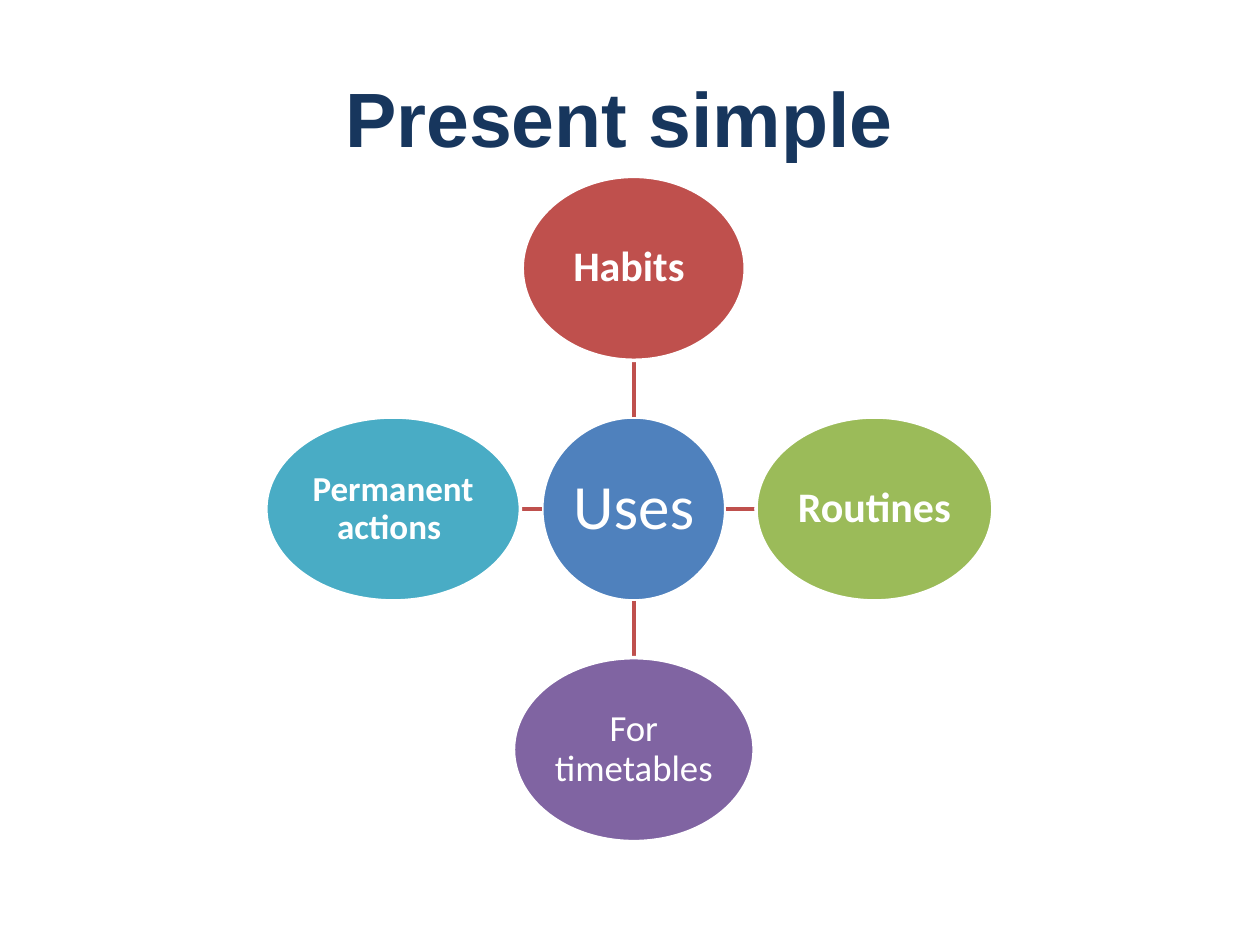
"""Build a slide with the uses of the present simple around a hub."""
from lxml import etree
from pptx import Presentation
from pptx.dml.color import RGBColor
from pptx.enum.shapes import MSO_CONNECTOR, MSO_SHAPE
from pptx.enum.text import MSO_ANCHOR, PP_ALIGN
from pptx.oxml.ns import qn
from pptx.util import Inches, Pt

OVAL = MSO_SHAPE.OVAL
LINE = MSO_CONNECTOR.STRAIGHT
MIDDLE = MSO_ANCHOR.MIDDLE
CENTER = PP_ALIGN.CENTER

COLORS = {
    "navy": "17365D", "white": "FFFFFF", "blue": "4F81BD", "red": "BF504D",
    "green": "9BBB59", "purple": "8064A2", "teal": "49ACC5",
}


def rgb(name):
    return RGBColor.from_string(COLORS[name])


def write(shape, text, inset, space, font):
    frame = shape.text_frame
    frame.word_wrap = True
    frame.vertical_anchor = MIDDLE
    for side, gap in inset.items():
        setattr(frame, "margin_" + side, Inches(gap))
    para = frame.paragraphs[0]
    para.alignment = CENTER
    para.line_spacing = space
    run = para.add_run()
    run.text = text
    for key, value in font.items():
        if key == "color":
            run.font.color.rgb = rgb(value)
        else:
            setattr(run.font, key, value)


prs = Presentation()
prs.slide_width = Inches(10)
prs.slide_height = Inches(7.5)
slide = prs.slides.add_slide(prs.slide_layouts[6])
shapes = slide.shapes

title = shapes.add_textbox(Inches(0.5), Inches(0.3), Inches(9), Inches(1.25))
write(title, "Present simple ",
      {"left": 0.1, "right": 0.1, "top": 0.05, "bottom": 0.05}, 1.0,
      {"name": "Arial", "size": Pt(44), "bold": True, "color": "navy"})

HUB_X, HUB_Y = 5.03, 4.04
REACH = 1.91
SIZE = 1.46

ovals = [
    ("Uses ", 0, 0, SIZE, "blue", 36, False),
    ("Habits ", 0, -1, 1.77, "red", 24, True),
    ("Routines ", 1, 0, 1.88, "green", 24, True),
    ("For timetables", 0, 1, 1.91, "purple", 21, False),
    ("Permanent actions ", -1, 0, 2.02, "teal", 20, True),
]

for text, dx, dy, width, color, size, bold in ovals:
    x = HUB_X + dx * REACH
    y = HUB_Y + dy * REACH
    if dx or dy:
        link = shapes.add_connector(
            LINE,
            Inches(HUB_X + dx * SIZE / 2), Inches(HUB_Y + dy * SIZE / 2),
            Inches(x - dx * width / 2), Inches(y - dy * SIZE / 2))
        link.line.color.rgb = rgb("red")
        link.line.width = Pt(2)
        etree.SubElement(link._element.spPr, qn("a:effectLst"))
    oval = shapes.add_shape(
        OVAL, Inches(x - width / 2), Inches(y - SIZE / 2),
        Inches(width), Inches(SIZE))
    oval.shadow.inherit = False
    oval.fill.solid()
    oval.fill.fore_color.rgb = rgb(color)
    oval.line.color.rgb = rgb("white")
    oval.line.width = Pt(2)
    write(oval, text, dict.fromkeys(("left", "right", "top", "bottom"), 0.02),
          0.9, {"name": "Calibri", "size": Pt(size), "bold": bold,
                "color": "white"})

prs.save("out.pptx")
